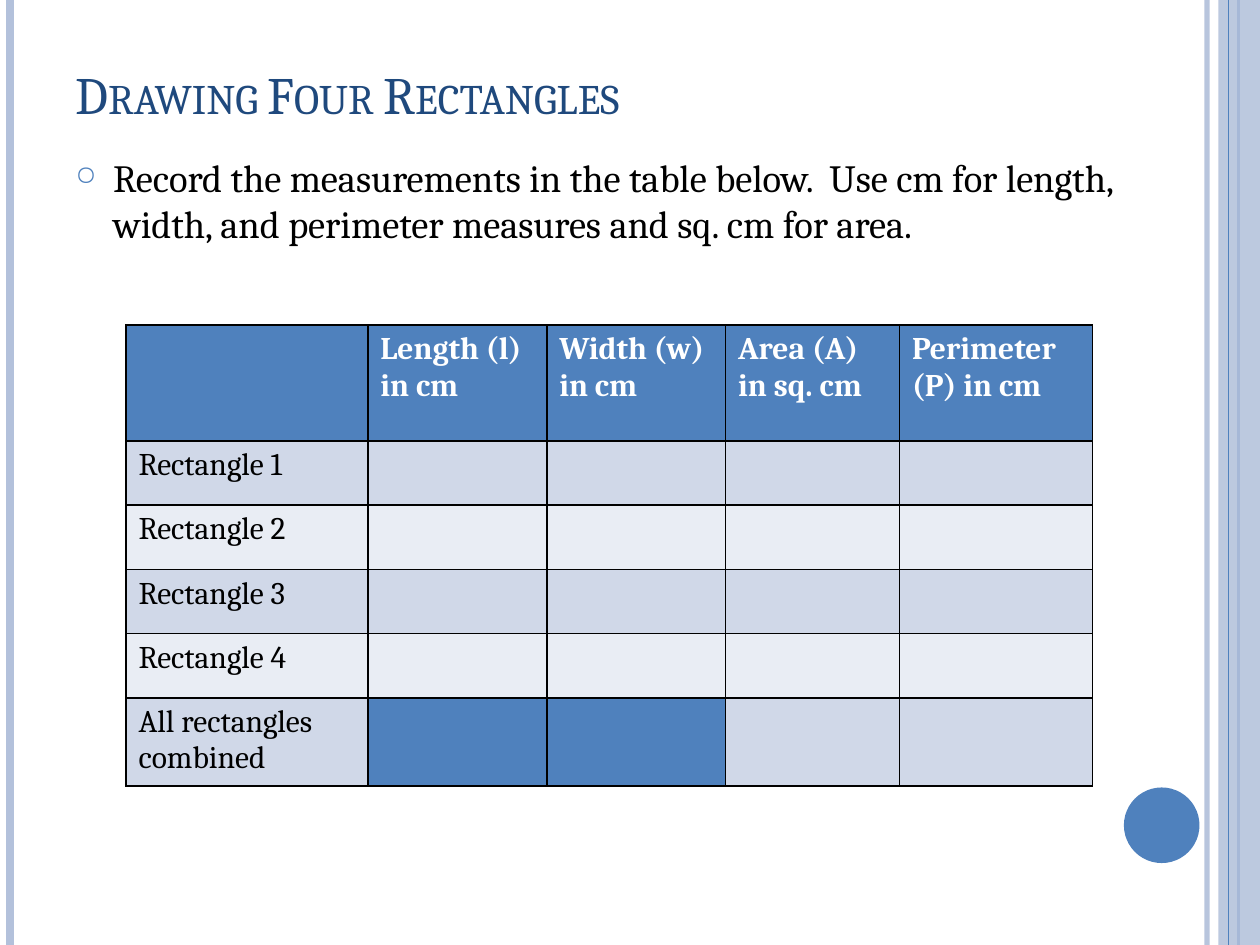
"""Build the slide that asks for the measurements of four rectangles."""
from dataclasses import dataclass

from lxml.etree import SubElement
from pptx import Presentation
from pptx.dml.color import RGBColor
from pptx.enum.shapes import MSO_CONNECTOR, MSO_SHAPE
from pptx.enum.text import MSO_ANCHOR
from pptx.oxml.ns import qn
from pptx.util import Inches, Pt

FONT = "Cambria"
BLACK = RGBColor(0x00, 0x00, 0x00)
WHITE = RGBColor(0xFF, 0xFF, 0xFF)
NAVY = RGBColor(0x1F, 0x49, 0x7D)
BLUE = RGBColor(0x4F, 0x81, 0xBD)
PALE_BLUE = RGBColor(0xB3, 0xC1, 0xDB)
DARK_BAND = RGBColor(0xD0, 0xD8, 0xE8)
LIGHT_BAND = RGBColor(0xE9, 0xED, 0xF4)

SLIDE_WIDTH, SLIDE_HEIGHT = 10, 7.5
COLUMN_WIDTHS = (1.92, 1.42, 1.42, 1.38, 1.53)
HEADER_HEIGHT, ROW_HEIGHT = 0.92, 0.51
HEADINGS = ("", "Length (l) in cm", "Width (w) in cm", "Area (A) in sq. cm", "Perimeter (P) in cm")
ROW_LABELS = (*(f"Rectangle {number}" for number in range(1, 5)), "All rectangles combined")
UNUSED_CELLS = {(len(ROW_LABELS), 1), (len(ROW_LABELS), 2)}


@dataclass(frozen=True)
class Stripe:
    x: float
    color: RGBColor
    width: float
    opacity: int = 100


@dataclass(frozen=True)
class Panel:
    preset: MSO_SHAPE
    left: float
    top: float
    width: float
    height: float
    color: RGBColor
    opacity: int = 100


DECORATION = (
    Stripe(9.58, PALE_BLUE, 3, 93),
    Stripe(0.08, PALE_BLUE, 4.5),
    Stripe(9.83, BLUE, 1.5),
    Panel(MSO_SHAPE.RECTANGLE, 9.67, 0, 0.33, SLIDE_HEIGHT, PALE_BLUE, 87),
    Stripe(9.75, BLUE, 0.75),
    Panel(MSO_SHAPE.OVAL, 8.92, 6.25, 0.6, 0.6, BLUE),
)


def set_opacity(element, opacity: int) -> None:
    """Make the first solid colour inside an element partly transparent."""
    if opacity < 100:
        color = next(element.iter(qn("a:srgbClr")))
        SubElement(color, qn("a:alpha"), val=str(opacity * 1000))


def draw_stripe(slide, stripe: Stripe) -> None:
    """Draw a vertical line over the full slide height."""
    x = Inches(stripe.x)
    line = slide.shapes.add_connector(MSO_CONNECTOR.STRAIGHT, x, 0, x, Inches(SLIDE_HEIGHT))
    line.line.color.rgb = stripe.color
    line.line.width = Pt(stripe.width)
    properties = line._element.spPr
    set_opacity(properties, stripe.opacity)
    SubElement(properties, qn("a:effectLst"))


def draw_panel(slide, panel: Panel) -> None:
    """Draw a filled shape without outline."""
    box = map(Inches, (panel.left, panel.top, panel.width, panel.height))
    shape = slide.shapes.add_shape(panel.preset, *box)
    shape.shadow.inherit = False
    shape.fill.solid()
    shape.fill.fore_color.rgb = panel.color
    shape.line.fill.background()
    set_opacity(shape._element.spPr, panel.opacity)


def write_text(frame, text: str, *, size: float, color: RGBColor, bold: bool = False,
               small_caps: bool = False, bullet: str = "") -> None:
    """Put one formatted paragraph into a text frame."""
    frame.word_wrap = True
    paragraph = frame.paragraphs[0]
    run = paragraph.add_run()
    run.text = text
    run.font.name = FONT
    run.font.size = Pt(size)
    run.font.bold = bold
    run.font.color.rgb = color
    if small_caps:
        run._r.get_or_add_rPr().set("cap", "small")
    if bullet:
        paragraph.space_before = Pt(6)
        properties = paragraph._p.get_or_add_pPr()
        properties.set("marL", str(Inches(0.3)))
        properties.set("indent", str(Inches(-0.3)))
        bullet_color = SubElement(properties, qn("a:buClr"))
        SubElement(bullet_color, qn("a:srgbClr"), val=str(BLUE))
        SubElement(properties, qn("a:buSzPct"), val="70000")
        SubElement(properties, qn("a:buChar"), char=bullet)


def add_border(cell) -> None:
    """Outline all four sides of a cell in black."""
    properties = cell._tc.get_or_add_tcPr()
    for side in ("lnL", "lnR", "lnT", "lnB"):
        line = SubElement(properties, qn(f"a:{side}"), w=str(Pt(1)))
        fill = SubElement(line, qn("a:solidFill"))
        SubElement(fill, qn("a:srgbClr"), val=str(BLACK))


def cell_color(row: int, column: int) -> RGBColor:
    """Return the fill for a place in the table."""
    if row == 0 or (row, column) in UNUSED_CELLS:
        return BLUE
    return DARK_BAND if row % 2 else LIGHT_BAND


def draw_measurements(slide) -> None:
    """Draw the table in which the measurements are recorded."""
    row_heights = (HEADER_HEIGHT, *[ROW_HEIGHT] * len(ROW_LABELS))
    table = slide.shapes.add_table(
        len(row_heights), len(COLUMN_WIDTHS), Inches(1), Inches(2.58),
        Inches(sum(COLUMN_WIDTHS)), Inches(sum(row_heights))).table
    for column, width in zip(table.columns, COLUMN_WIDTHS):
        column.width = Inches(width)
    for row, height in zip(table.rows, row_heights):
        row.height = Inches(height)
    blanks = [""] * (len(COLUMN_WIDTHS) - 1)
    contents = [HEADINGS, *((label, *blanks) for label in ROW_LABELS)]
    for row, texts in enumerate(contents):
        for column, text in enumerate(texts):
            cell = table.cell(row, column)
            add_border(cell)
            cell.fill.solid()
            cell.fill.fore_color.rgb = cell_color(row, column)
            if text:
                write_text(cell.text_frame, text, size=18,
                           color=BLACK if row else WHITE, bold=row == 0)


def main() -> None:
    """Assemble and save the slide."""
    presentation = Presentation()
    presentation.slide_width = Inches(SLIDE_WIDTH)
    presentation.slide_height = Inches(SLIDE_HEIGHT)
    slide = presentation.slides.add_slide(presentation.slide_layouts[6])

    for part in DECORATION:
        if isinstance(part, Stripe):
            draw_stripe(slide, part)
        else:
            draw_panel(slide, part)

    title = slide.shapes.add_textbox(Inches(0.5), Inches(0.42), Inches(8.17), Inches(0.62)).text_frame
    title.vertical_anchor = MSO_ANCHOR.BOTTOM
    write_text(title, "Drawing Four Rectangles", size=30, color=NAVY, small_caps=True)

    instruction = slide.shapes.add_textbox(Inches(0.5), Inches(1.17), Inches(8.83), Inches(5.83)).text_frame
    write_text(instruction,
               "Record the measurements in the table below.  Use cm for length, "
               "width, and perimeter measures and sq. cm for area.",
               size=22, color=BLACK, bullet="○")

    draw_measurements(slide)
    presentation.save("out.pptx")


if __name__ == "__main__":
    main()
